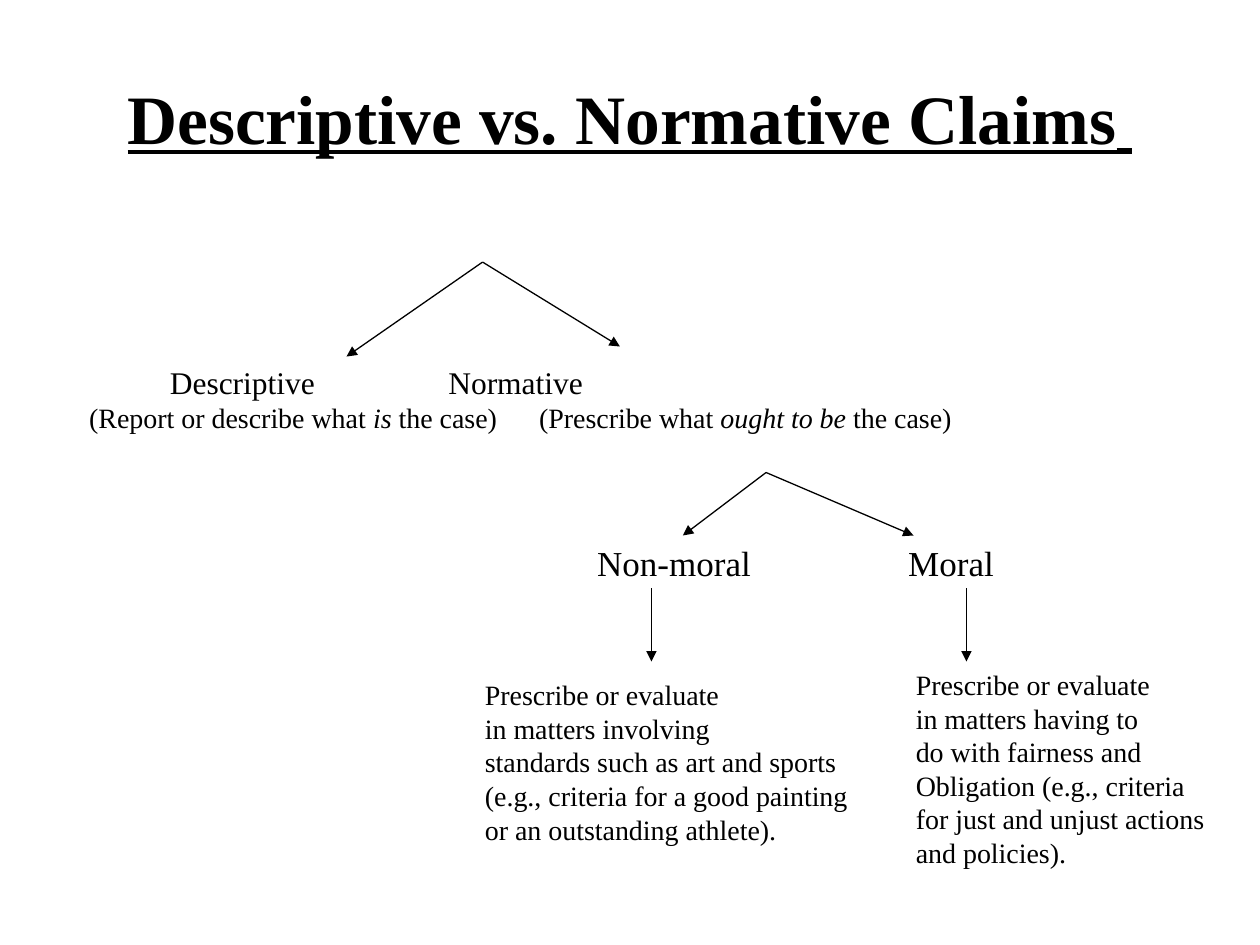
from typing import NamedTuple

from lxml.etree import SubElement
from pptx import Presentation
from pptx.dml.color import RGBColor
from pptx.enum.shapes import MSO_CONNECTOR as Connector
from pptx.enum.text import MSO_ANCHOR as Anchor, PP_ALIGN as Align
from pptx.oxml.ns import qn
from pptx.util import Inches, Pt

BLACK = "000000"
SERIF = "Times New Roman"


class Run(NamedTuple):
    text: str
    italic: bool = False
    bold: bool = False
    underline: bool = False
    font: str = SERIF


class Line(NamedTuple):
    runs: list[Run]
    size: float
    indent: float = 0  # inches from the left of the text area
    align: Align = Align.LEFT


class Box(NamedTuple):
    left: float
    top: float
    width: float
    height: float
    lines: list[Line]
    anchor: Anchor = Anchor.TOP


class Arrow(NamedTuple):
    start: tuple[float, float]
    end: tuple[float, float]


def color(value: str) -> RGBColor:
    return RGBColor.from_string(value)


def plain_lines(*texts: str, size: float = 16) -> list[Line]:
    return [Line([Run(text)], size) for text in texts]


def add_box(slide, box: Box) -> None:
    shape = slide.shapes.add_textbox(
        Inches(box.left), Inches(box.top), Inches(box.width), Inches(box.height))
    frame = shape.text_frame
    frame.word_wrap = True
    frame.vertical_anchor = box.anchor
    for index, line in enumerate(box.lines):
        paragraph = frame.add_paragraph() if index else frame.paragraphs[0]
        paragraph.alignment = line.align
        if line.indent:
            properties = paragraph._p.get_or_add_pPr()
            properties.set("marL", str(Inches(line.indent)))
            properties.set("indent", "0")
        for part in line.runs:
            run = paragraph.add_run()
            run.text = part.text
            font = run.font
            font.name, font.size = part.font, Pt(line.size)
            font.bold, font.italic = part.bold, part.italic
            font.underline = part.underline
            font.color.rgb = color(BLACK)


def add_arrow(slide, arrow: Arrow) -> None:
    points = [Inches(value) for value in (*arrow.start, *arrow.end)]
    connector = slide.shapes.add_connector(Connector.STRAIGHT, *points)
    connector.line.color.rgb = color(BLACK)
    connector.line.width = Pt(0.75)
    SubElement(connector.line._get_or_add_ln(), qn("a:tailEnd"), type="triangle")
    SubElement(connector._element.spPr, qn("a:effectLst"))


TITLE = Box(0.5, 0.3, 9, 1.25, [
    Line([Run("Descriptive vs. Normative Claims", bold=True, underline=True),
          Run(" ", underline=True, font="Calibri")], 39.6, align=Align.CENTER),
], Anchor.MIDDLE)

# First level of the tree: a label and its meaning
DESCRIPTIVE = Box(0.61, 2.83, 3.5, 0.77, [
    Line([Run("Descriptive")], 18, indent=0.64),
    Line([Run("(Report or describe what "), Run("is", italic=True),
          Run(" the case)")], 16),
])
NORMATIVE = Box(3.46, 2.83, 4.4, 0.77, [
    Line([Run("Normative")], 18),
    Line([Run("(Prescribe what "), Run("ought to be ", italic=True),
          Run("the case)")], 16, indent=0.72),
])

# Second level: the kinds of normative claim
KINDS = [
    Box(left, 4.25, 1.6, 0.43, plain_lines(label, size=20))
    for left, label in ((4.64, "Non-moral"), (7.11, "Moral"))
]

# Explanations
NON_MORAL = Box(3.75, 5.33, 3.3, 1.7, plain_lines(
    "Prescribe or evaluate",
    "in matters involving",
    "standards such as art and sports",
    "(e.g., criteria for a good painting",
    "or an outstanding athlete).",
))
MORAL = Box(7.17, 5.25, 2.5, 1.7, plain_lines(
    "Prescribe or evaluate",
    "in matters having to",
    "do with fairness and",
    "Obligation (e.g., criteria for just and unjust actions and policies).",
))

# Arrows: two forks, then one drop under each kind
CLAIMS_FORK = (3.83, 2.08)
NORMATIVE_FORK = (6.08, 3.75)
ARROWS = [
    Arrow(CLAIMS_FORK, (2.75, 2.83)),
    Arrow(CLAIMS_FORK, (4.92, 2.75)),
    Arrow(NORMATIVE_FORK, (5.42, 4.25)),
    Arrow(NORMATIVE_FORK, (7.25, 4.25)),
    *(Arrow((x, 4.67), (x, 5.25)) for x in (5.17, 7.67)),
]


def main() -> None:
    presentation = Presentation()
    presentation.slide_width, presentation.slide_height = Inches(10), Inches(7.5)
    slide = presentation.slides.add_slide(presentation.slide_layouts[6])
    slide.background.fill.solid()
    slide.background.fill.fore_color.rgb = color("FFFFFF")
    for box in (TITLE, DESCRIPTIVE, NORMATIVE, *KINDS, NON_MORAL, MORAL):
        add_box(slide, box)
    for arrow in ARROWS:
        add_arrow(slide, arrow)
    presentation.save("out.pptx")


if __name__ == "__main__":
    main()
